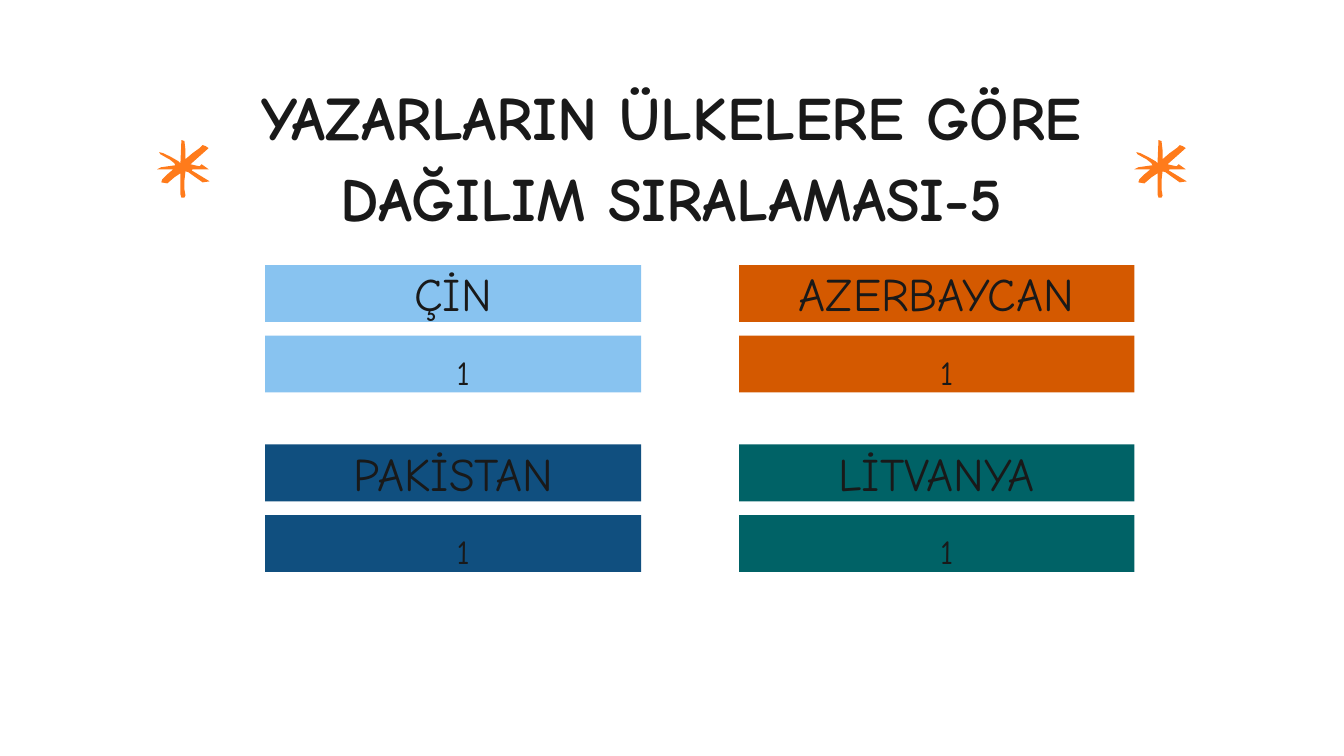
import pptx
import pptx.dml.color
import pptx.enum.shapes
import pptx.enum.text
import pptx.util

SLIDE_WIDTH = pptx.util.Inches(13.33)
SLIDE_HEIGHT = pptx.util.Inches(7.5)
FONT = "Comic Neue"
CENTER = pptx.enum.text.PP_ALIGN.CENTER

COLOURS = {
    "ink": "191919",
    "star": "FF7B1B",
    "sky": "88C3F0",
    "orange": "D45900",
    "navy": "104F7F",
    "teal": "006266",
}

TITLE = "YAZARLARIN ÜLKELERE GÖRE DAĞILIM SIRALAMASI-5"
COUNTRIES = [
    ("ÇİN", "1", "sky"),
    ("AZERBAYCAN", "1", "orange"),
    ("PAKİSTAN", "1", "navy"),
    ("LİTVANYA", "1", "teal"),
]

COLUMNS = [(19.73, 27.98), (54.99, 29.41)]
FIRST_ROW = 35.07
ROW_PITCH = 23.73
COUNT_OFFSET = 9.33
BAR_HEIGHT = 7.53

FRAME_FORMAT = {
    "margin_left": 0,
    "margin_top": 0,
    "margin_right": 0,
    "margin_bottom": 0,
    "word_wrap": True,
    "vertical_anchor": pptx.enum.text.MSO_ANCHOR.TOP,
    "auto_size": pptx.enum.text.MSO_AUTO_SIZE.SHAPE_TO_FIT_TEXT,
}
TITLE_FORMAT = {
    "paragraph": {"alignment": CENTER, "line_spacing": 1.1},
    "font": {"name": FONT, "size": pptx.util.Pt(44), "bold": True},
}
COUNTRY_FORMAT = {
    "paragraph": {"alignment": CENTER, "line_spacing": 1.0},
    "font": {"name": FONT, "size": pptx.util.Pt(33.3), "bold": False},
}
COUNT_FORMAT = {
    "paragraph": {"alignment": CENTER, "line_spacing": 1.4, "level": 1},
    "font": {"name": FONT, "size": pptx.util.Pt(24), "bold": False},
}
COUNT_INDENT = pptx.util.Inches(0.2)

STAR_POINTS = [
    (24, 0), (27, 1), (28, 10), (28, 19), (35, 13), (42, 8), (45, 5),
    (48, 6), (51, 8), (33, 24), (37, 25), (42, 26), (44, 24), (51, 29),
    (35, 29), (34, 30), (52, 41), (45, 42), (38, 37), (31, 32), (28, 31),
    (27, 40), (27, 49), (28, 55), (27, 57), (24, 57), (23, 54), (23, 36),
    (23, 33), (17, 37), (10, 43), (4, 42), (5, 39), (10, 34), (16, 29),
    (0, 29), (4, 27), (18, 25), (17, 23), (12, 19), (10, 18), (3, 14),
    (2, 12), (6, 13), (14, 17), (21, 21), (23, 23),
]


def across(percent):
    return round(SLIDE_WIDTH * percent / 100)


def down(percent):
    return round(SLIDE_HEIGHT * percent / 100)


def colour(key):
    return pptx.dml.color.RGBColor.from_string(COLOURS[key])


def set_all(target, values):
    for attribute, value in values.items():
        setattr(target, attribute, value)


def write(shape, text, text_format):
    frame = shape.text_frame
    set_all(frame, FRAME_FORMAT)
    paragraph = frame.paragraphs[0]
    set_all(paragraph, text_format["paragraph"])
    run = paragraph.add_run()
    run.text = text
    set_all(run.font, text_format["font"])
    run.font.color.rgb = colour("ink")
    return paragraph


def paint(shape, fill):
    shape.shadow.inherit = False
    shape.fill.solid()
    shape.fill.fore_color.rgb = colour(fill)
    shape.line.fill.background()


def add_title(slide):
    title = slide.shapes.title
    set_all(title, {
        "left": across(17.18),
        "top": down(9.47),
        "width": across(65.64),
        "height": down(21.73),
    })
    write(title, TITLE, TITLE_FORMAT)


def add_star(slide, left):
    outline = slide.shapes.build_freeform(
        *STAR_POINTS[0], scale=pptx.util.Inches(0.01))
    outline.add_line_segments(STAR_POINTS[1:], close=True)
    paint(outline.convert_to_shape(across(left), down(18.53)), "star")


def add_bar(card, left, top, width, fill):
    bar = card.shapes.add_shape(
        pptx.enum.shapes.MSO_SHAPE.RECTANGLE,
        across(left), down(top), across(width), down(BAR_HEIGHT))
    paint(bar, fill)
    return bar


def add_country(slide, index, country, count, fill):
    row, column = divmod(index, len(COLUMNS))
    left, width = COLUMNS[column]
    top = FIRST_ROW + row * ROW_PITCH
    card = slide.shapes.add_group_shape()
    count_bar = add_bar(card, left, top + COUNT_OFFSET, width, fill)
    properties = write(count_bar, count, COUNT_FORMAT)._p.get_or_add_pPr()
    properties.set("marL", str(COUNT_INDENT))
    properties.set("indent", "0")
    write(add_bar(card, left, top, width, fill), country, COUNTRY_FORMAT)


def main():
    presentation = pptx.Presentation()
    presentation.slide_width = SLIDE_WIDTH
    presentation.slide_height = SLIDE_HEIGHT
    slide = presentation.slides.add_slide(
        presentation.slide_layouts.get_by_name("Title Only"))
    add_title(slide)
    for left in (11.7, 84.4):
        add_star(slide, left)
    for index, entry in enumerate(COUNTRIES):
        add_country(slide, index, *entry)
    presentation.save("out.pptx")


if __name__ == "__main__":
    main()
